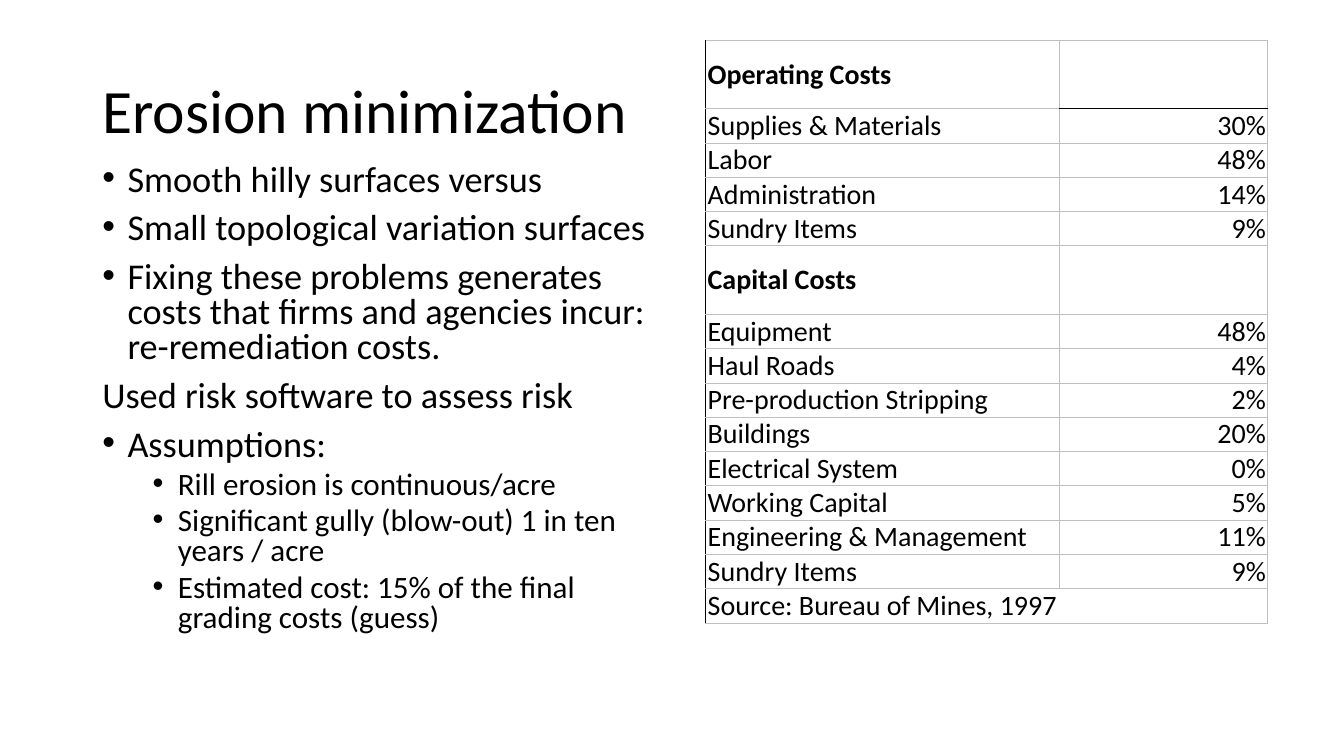
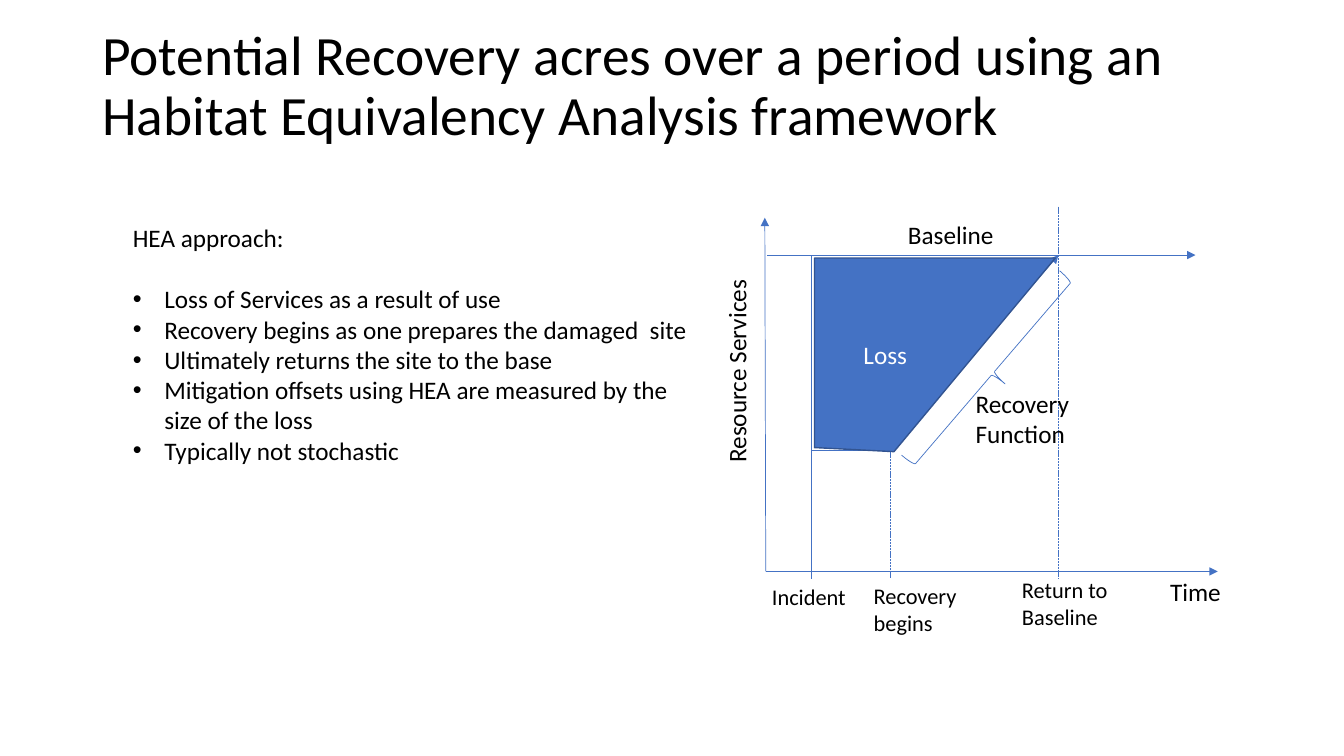
from dataclasses import dataclass

from lxml import etree
from pptx import Presentation
from pptx import util as u
from pptx.dml.color import RGBColor
from pptx.enum import dml, shapes, text
from pptx.oxml import ns

Pt = u.Pt


@dataclass(frozen=True)
class Theme:
    font: str = "Calibri"
    ink: str = "000000"
    white: str = "FFFFFF"
    accent: str = "4472C4"
    edge: str = "325491"
    grid: str = "BFBFBF"
    title: float = 44
    long_title: float = 39.6
    body: float = 25.9
    sub: float = 22.2
    cell: float = 20
    label: float = 18
    small: float = 16
    hairline: float = 0.5


class Deck:
    def __init__(self, theme):
        self.t = theme
        self.prs = Presentation()
        self.prs.slide_width, self.prs.slide_height = Pt(960), Pt(540)
        self.s = None

    def slide(self):
        self.s = self.prs.slides.add_slide(self.prs.slide_layouts[6])

    def run(self, p, words, size, color=None, bold=False):
        r = p.add_run()
        r.text = words
        r.font.name = self.t.font
        r.font.size = Pt(size)
        r.font.bold = bold
        r.font.color.rgb = RGBColor.from_string(color or self.t.ink)

    def bullet(self, p, margin, hang):
        ppr = p._p.get_or_add_pPr()
        ppr.set("marL", str(Pt(margin)))
        ppr.set("indent", str(-Pt(hang)))
        etree.SubElement(ppr, ns.qn("a:buFont")).set("typeface", "Arial")
        etree.SubElement(ppr, ns.qn("a:buChar")).set("char", "•")

    def box(self, x, y, w, h, anchor=text.MSO_ANCHOR.TOP):
        sp = self.s.shapes.add_textbox(Pt(x), Pt(y), Pt(w), Pt(h))
        sp.text_frame.word_wrap = True
        sp.text_frame.vertical_anchor = anchor
        return sp

    def paragraph(self, tf, first):
        return tf.paragraphs[0] if first else tf.add_paragraph()

    def title(self, words, h, size):
        sp = self.box(66, 28.8, 828, h, text.MSO_ANCHOR.MIDDLE)
        p = sp.text_frame.paragraphs[0]
        p.line_spacing = 0.9
        self.run(p, words, size)

    def label(self, words, x, y, w, h, size, rotation=0):
        sp = self.box(x, y, w, h)
        sp.rotation = rotation
        self.run(sp.text_frame.paragraphs[0], words, size)

    def outline(self, x, y, w, h, items):
        tf = self.box(x, y, w, h).text_frame
        for i, (level, words) in enumerate(items):
            p = self.paragraph(tf, i == 0)
            p.line_spacing = 0.8
            p.space_before = Pt(5 if level == 2 else 10)
            if level:
                self.bullet(p, 54 if level == 2 else 18, 18)
            self.run(p, words, self.t.sub if level == 2 else self.t.body)

    def bullets(self, x, y, w, h, heading, items):
        tf = self.box(x, y, w, h).text_frame
        p = tf.paragraphs[0]
        p.space_after = Pt(22)
        self.run(p, heading, self.t.label)
        for words in items:
            p = tf.add_paragraph()
            self.bullet(p, 22.5, 22.5)
            self.run(p, words, self.t.label)

    def line(self, x1, y1, x2, y2, arrow=False, dashed=False):
        c = self.s.shapes.add_connector(
            shapes.MSO_CONNECTOR.STRAIGHT, Pt(x1), Pt(y1), Pt(x2), Pt(y2))
        self.stroke(c, self.t.accent, self.t.hairline)
        if dashed:
            c.line.dash_style = dml.MSO_LINE.SQUARE_DOT
        if arrow:
            ln = c.line._get_or_add_ln()
            etree.SubElement(ln, ns.qn("a:tailEnd")).set("type", "triangle")
        etree.SubElement(c._element.spPr, ns.qn("a:effectLst"))

    def stroke(self, sp, color, width):
        sp.line.color.rgb = RGBColor.from_string(color)
        sp.line.width = Pt(width)

    def brace(self, x, y, w, h, rotation):
        sp = self.s.shapes.add_shape(
            shapes.MSO_SHAPE.RIGHT_BRACE, Pt(x), Pt(y), Pt(w), Pt(h))
        sp.shadow.inherit = False
        sp.fill.background()
        sp.rotation = rotation
        self.stroke(sp, self.t.accent, self.t.hairline)

    def area(self, points, words, inset):
        pts = [(Pt(x), Pt(y)) for x, y in points]
        fb = self.s.shapes.build_freeform(*pts[0], scale=1.0)
        fb.add_line_segments(pts[1:], close=True)
        sp = fb.convert_to_shape()
        sp.shadow.inherit = False
        sp.fill.solid()
        sp.fill.fore_color.rgb = RGBColor.from_string(self.t.accent)
        self.stroke(sp, self.t.edge, 1)
        tf = sp.text_frame
        tf.margin_left = Pt(inset)
        tf.vertical_anchor = text.MSO_ANCHOR.MIDDLE
        p = tf.paragraphs[0]
        p.alignment = text.PP_ALIGN.LEFT
        self.run(p, words, self.t.label, self.t.white)

    def borders(self, cell, **special):
        tcpr = cell._tc.get_or_add_tcPr()
        for side in "LRTB":
            color, width = special.get(side, (self.t.grid, 0.75))
            ln = etree.SubElement(tcpr, ns.qn(f"a:ln{side}"), w=str(Pt(width)))
            fill = etree.SubElement(ln, ns.qn("a:solidFill"))
            etree.SubElement(fill, ns.qn("a:srgbClr"), val=color)

    def table(self, x, y, widths, rows, row_h, section_h):
        heights = [section_h if value is None else row_h for _, value in rows]
        tbl = self.s.shapes.add_table(
            len(rows), 2, Pt(x), Pt(y), Pt(sum(widths)), Pt(sum(heights))).table
        tbl.first_row = tbl.horz_banding = False
        for col, w in zip(tbl.columns, widths):
            col.width = Pt(w)
        rule = (self.t.ink, 0.6)
        for i, (name, value) in enumerate(rows):
            tbl.rows[i].height = Pt(heights[i])
            for j, words in enumerate((name, value)):
                cell = tbl.cell(i, j)
                special = {"L": (self.t.ink, 1.13)} if j == 0 else {}
                if j == 1 and i < 2:
                    special["BT"[i]] = rule
                self.borders(cell, **special)
                cell.fill.background()
                cell.margin_left = cell.margin_right = Pt(1.5)
                cell.margin_top = cell.margin_bottom = 0
                cell.vertical_anchor = text.MSO_ANCHOR.MIDDLE
                if words:
                    p = cell.text_frame.paragraphs[0]
                    if j == 1:
                        p.alignment = text.PP_ALIGN.RIGHT
                    self.run(p, words, self.t.cell, bold=value is None)
        last = len(rows) - 1
        tbl.cell(last, 0).merge(tbl.cell(last, 1))


def erosion(d):
    d.slide()
    d.title("Erosion minimization", 104.4, d.t.title)
    d.outline(66, 113.8, 414, 342.7, [
        (1, "Smooth hilly surfaces versus"),
        (1, "Small topological variation surfaces"),
        (1, "Fixing these problems generates costs that firms and agencies "
            "incur: re-remediation costs."),
        (0, "Used risk software to assess risk"),
        (1, "Assumptions:"),
        (2, "Rill erosion is continuous/acre"),
        (2, "Significant gully (blow-out) 1 in ten years / acre"),
        (2, "Estimated cost: 15% of the final grading costs (guess)"),
    ])
    d.table(504, 28.8, (252.7, 149), [
        ("Operating Costs", None),
        ("Supplies & Materials", "30%"),
        ("Labor", "48%"),
        ("Administration", "14%"),
        ("Sundry Items", "9%"),
        ("Capital Costs", None),
        ("Equipment", "48%"),
        ("Haul Roads", "4%"),
        ("Pre-production Stripping", "2%"),
        ("Buildings", "20%"),
        ("Electrical System", "0%"),
        ("Working Capital", "5%"),
        ("Engineering & Management", "11%"),
        ("Sundry Items", "9%"),
        ("Source: Bureau of Mines, 1997", ""),
    ], 24.5, 48.9)


def recovery(d):
    d.slide()
    d.title("Potential Recovery acres over a period using an Habitat "
            "Equivalency Analysis framework", 67, d.t.long_title)

    axis_x, axis_y, base_y, low_y, tick_y = 547, 408.2, 182.2, 321.8, 413.3
    incident_x, begin_x, return_x = 579.6, 636.2, 756
    d.line(axis_x, axis_y, axis_x - 0.7, 155.5, arrow=True)
    d.line(axis_x, axis_y, 869.8, axis_y, arrow=True)
    d.line(axis_x + 0.9, base_y, 853.9, base_y, arrow=True)
    d.line(begin_x, low_y, return_x, base_y, arrow=True)
    d.line(begin_x, low_y, incident_x, low_y)
    d.line(incident_x, base_y, incident_x, tick_y)
    d.line(return_x, 147.6, return_x, tick_y, dashed=True)
    d.line(begin_x, low_y, begin_x, tick_y, dashed=True)
    d.brace(697.7, 180, 23, 173.5, 40.6)

    label, small = d.t.label, d.t.small
    d.label("Recovery Function", 689.8, 273.6, 84.2, 51, label)
    d.label("Resource Services", 450, 247, 152, 29, label, 270)
    d.label("Time", 828.7, axis_y, 84.2, 29, label)
    d.label("Baseline", 641.5, 153.4, 84.2, 29, label)
    d.label("Incident", 544.3, tick_y, 68.4, 26.6, small)
    d.label("Recovery begins", 617, 412.6, 82, 46, small)
    d.label("Return to Baseline", 722.9, axis_y, 82, 46, small)

    d.area([(581.8, 319.7), (638.6, 322.6), (753.8, 184.3), (581.8, 184.3)],
           "Loss", 35)
    d.bullets(87.8, 155.5, 422, 181.4, "HEA approach:", [
        "Loss of Services as a result of use",
        "Recovery begins as one prepares the damaged  site",
        "Ultimately returns the site to the base",
        "Mitigation offsets using HEA are measured by the size of the loss",
        "Typically not stochastic",
    ])


def main():
    d = Deck(Theme())
    erosion(d)
    recovery(d)
    d.prs.save("out.pptx")


if __name__ == "__main__":
    main()
